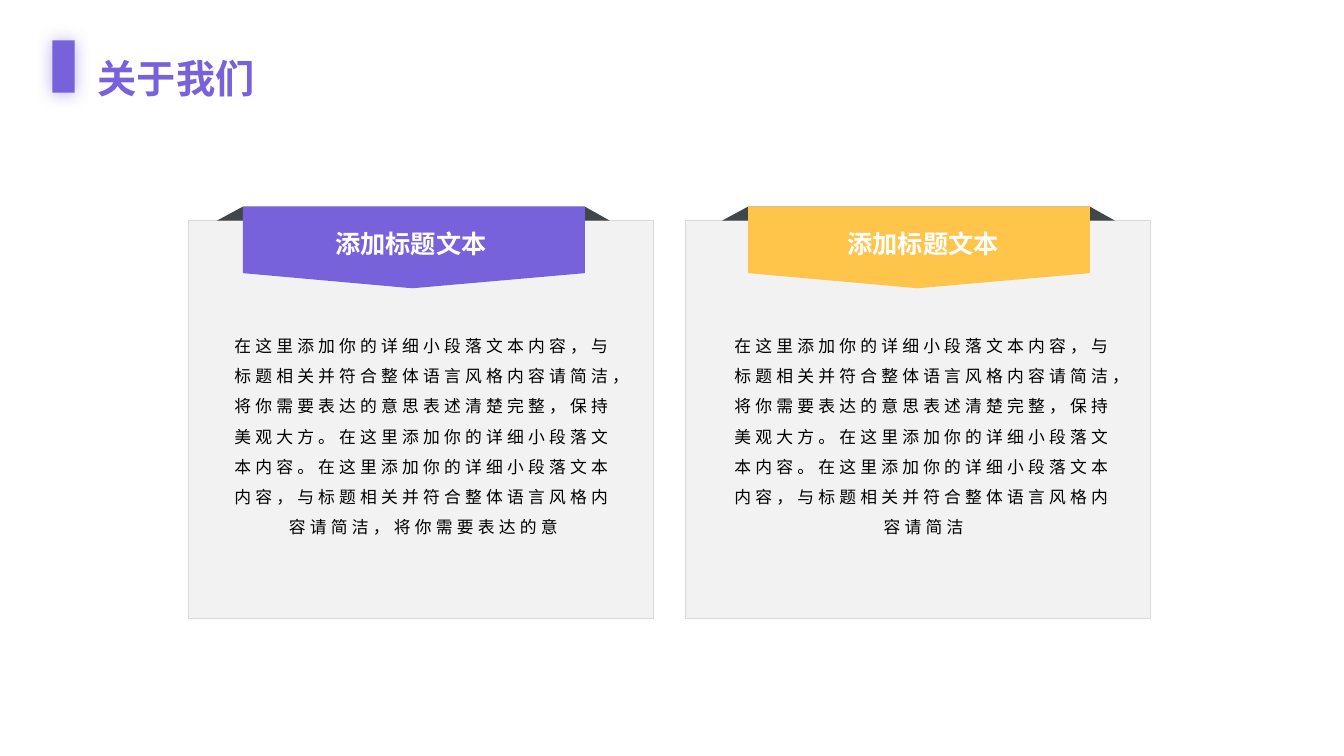
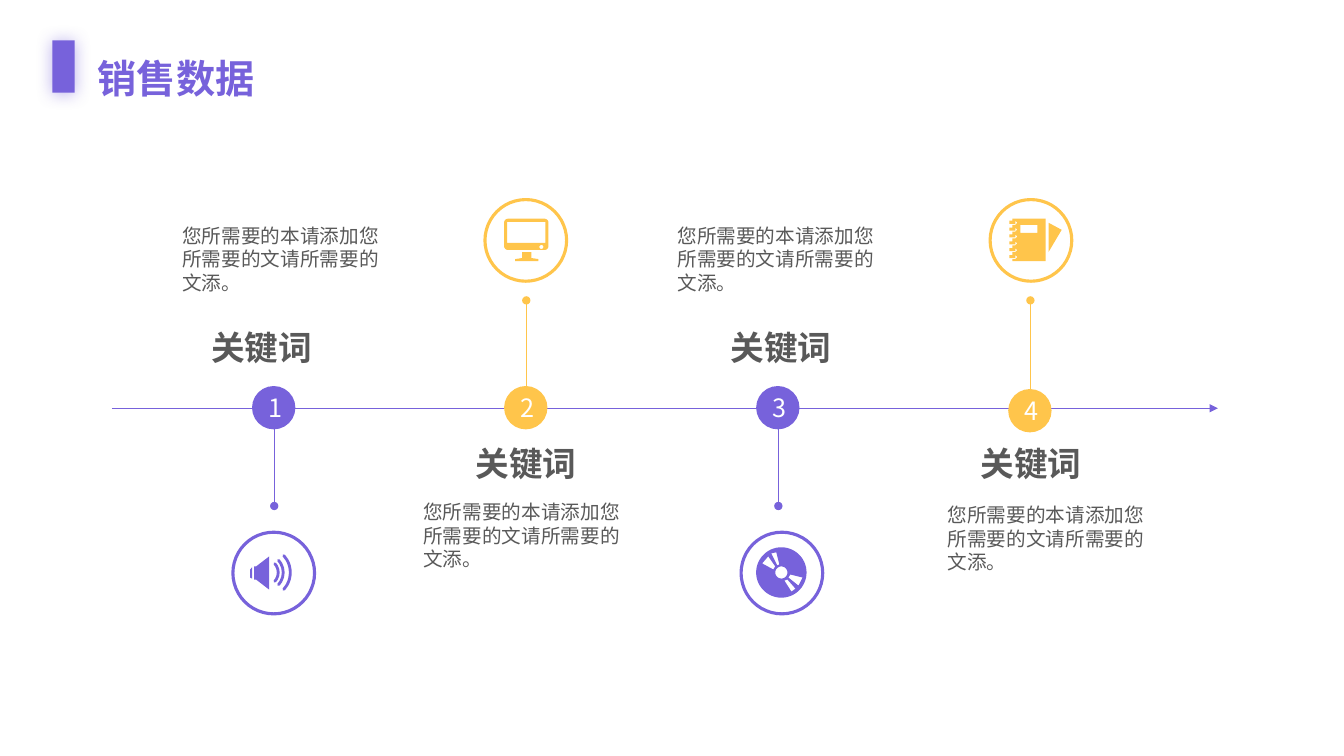
from dataclasses import dataclass
from math import cos, radians, sin
from typing import Callable

from lxml import etree
from pptx import Presentation
from pptx.dml.color import RGBColor
from pptx.enum import shapes, text
from pptx.oxml import ns
from pptx.util import Inches, Pt


@dataclass(frozen=True)
class Theme:
    """Colours, font and type sizes of the deck."""
    violet: str = "7762DB"
    amber: str = "FFC54B"
    panel: str = "F2F2F2"
    border: str = "D9D9D9"
    fold: str = "41464A"
    grey: str = "595959"
    black: str = "000000"
    white: str = "FFFFFF"
    font: str = "Noto Sans CJK SC"
    title: int = 28
    keyword: int = 24
    heading: int = 18
    detail: int = 14
    body: int = 12


THEME = Theme()
SHAPE, ALIGN = shapes.MSO_SHAPE, text.PP_ALIGN


@dataclass(frozen=True)
class Step:
    """One stop on the timeline."""
    color: str
    icon: Callable
    icon_left: float
    badge_top: float
    detail_at: tuple
    keyword_left: float
    text_above: bool


def sub(parent, tag, **attributes):
    """Append a namespaced XML element."""
    return etree.SubElement(parent, ns.qn(tag), attributes)


def rgb(color):
    """Turn a hex string into a colour."""
    return RGBColor.from_string(color)


def paint(shape, fill=None, line=None, weight=0.75):
    """Set fill and line, and clear the shadow."""
    shape.shadow.inherit = False
    if fill:
        shape.fill.solid()
        shape.fill.fore_color.rgb = rgb(fill)
    else:
        shape.fill.background()
    if line:
        shape.line.color.rgb = rgb(line)
        shape.line.width = Pt(weight)
    else:
        shape.line.fill.background()
    return shape


def preset(slide, kind, left, top, width, height, **style):
    """Add a painted preset shape."""
    box = map(Inches, (left, top, width, height))
    return paint(slide.shapes.add_shape(kind, *box), **style)


def outline(slide, origin, contours, color):
    """Fill closed contours given relative to an origin."""
    builder = None
    for contour in contours:
        points = [(Inches(origin[0] + x), Inches(origin[1] + y)) for x, y in contour]
        if builder is None:
            builder = slide.shapes.build_freeform(*points[0])
        else:
            builder.move_to(*points[0])
        builder.add_line_segments(points[1:], close=True)
    return paint(builder.convert_to_shape(), fill=color)


def write(frame, words, size, color, bold=False, align=ALIGN.LEFT, spacing=None, tracking=0):
    """Write one styled run into a text frame."""
    paragraph = frame.paragraphs[0]
    paragraph.alignment = align
    if spacing:
        paragraph.line_spacing = spacing
    run = paragraph.add_run()
    run.text = words
    run.font.size, run.font.bold, run.font.name = Pt(size), bold, THEME.font
    run.font.color.rgb = rgb(color)
    properties = run.font._element
    properties.find(ns.qn("a:latin")).addnext(
        etree.Element(ns.qn("a:ea"), typeface=THEME.font))
    if tracking:
        properties.set("spc", str(tracking * 100))


def label(slide, left, top, width, height, words, size, color, **style):
    """Add a wrapping text box that grows with its text."""
    frame = slide.shapes.add_textbox(*map(Inches, (left, top, width, height))).text_frame
    frame.word_wrap = True
    frame.auto_size = text.MSO_AUTO_SIZE.SHAPE_TO_FIT_TEXT
    write(frame, words, size, color, **style)


def connect(slide, start, end, color, head=None, tail=None):
    """Draw a thin line with optional end marks."""
    points = map(Inches, (*start, *end))
    line = slide.shapes.add_connector(shapes.MSO_CONNECTOR.STRAIGHT, *points)
    line.line.color.rgb = rgb(color)
    line.line.width = Pt(0.5)
    stroke = line.line._get_or_add_ln()
    for tag, mark in (("a:headEnd", head), ("a:tailEnd", tail)):
        if mark:
            sub(stroke, tag, type=mark)
    sub(line._element.spPr, "a:effectLst")


def titled_slide(deck, words):
    """Add a slide with the glowing bar and its title."""
    slide = deck.slides.add_slide(deck.slide_layouts[5])
    bar = preset(slide, SHAPE.RECTANGLE, 0.52, 0.4, 0.22, 0.52, fill=THEME.violet)
    glow = sub(bar._element.spPr.find(ns.qn("a:effectLst")), "a:outerShdw",
               blurRad=str(Pt(12)), dist=str(Pt(1)), dir="5400000", rotWithShape="0")
    sub(sub(glow, "a:srgbClr", val=THEME.violet), "a:alpha", val="50000")
    title = slide.shapes.title
    title.left, title.top, title.width, title.height = map(Inches, (0.87, 0.26, 2.43, 0.73))
    frame = title.text_frame
    frame.word_wrap = True
    frame.vertical_anchor = text.MSO_ANCHOR.TOP
    frame.auto_size = text.MSO_AUTO_SIZE.SHAPE_TO_FIT_TEXT
    write(frame, words, THEME.title, THEME.violet, bold=True, align=ALIGN.JUSTIFY, spacing=1.5)
    return slide


def ribbon_card(slide, panel_left, ribbon_left, heading_left, body_left, color, body):
    """Add a panel with a folded ribbon, a heading and body text."""
    preset(slide, SHAPE.RECTANGLE, panel_left, 2.19, 4.61, 3.95,
           fill=THEME.panel, line=THEME.border)
    origin = (ribbon_left, 2.05)
    outline(slide, origin, [[(0, 0), (3.39, 0), (3.64, 0.14), (-0.26, 0.14)]], THEME.fold)
    outline(slide, origin,
            [[(0, 0), (3.39, 0), (3.39, 0.66), (1.68, 0.81), (0, 0.66)]], color)
    label(slide, heading_left, 2.22, 2.29, 0.4, "添加标题文本", THEME.heading, THEME.white,
          bold=True, align=ALIGN.CENTER)
    label(slide, body_left, 3.18, 4, 2.19, body, THEME.body, THEME.black,
          align=ALIGN.CENTER, spacing=1.5, tracking=3)


def arc(x, y, radius, start=0, end=360):
    """List points along an arc, in degrees."""
    return [(x + radius * cos(radians(a)), y + radius * sin(radians(a)))
            for a in range(start, end + 1, 6)]


def rectangle(left, top, right, bottom):
    """List the corners of a rectangle."""
    return [(left, top), (right, top), (right, bottom), (left, bottom)]


def speaker_icon(slide, origin, color):
    """Draw a loudspeaker with three sound waves."""
    cone = [(0.36, 0.24), (0.23, 0.34), (0.21, 0.34), (0.21, 0.47), (0.23, 0.47), (0.36, 0.57)]
    back = [(0.17, 0.37), (0.19, 0.35), (0.19, 0.46), (0.17, 0.45)]
    outline(slide, origin, [cone, back], color)
    for radius in (0.13, 0.18, 0.25):
        wave = preset(slide, SHAPE.ARC, origin[0] + 0.32 - radius, origin[1] + 0.4 - radius,
                      2 * radius, 2 * radius, line=color, weight=2)
        wave.adjustments[0], wave.adjustments[1] = 318 * 0.6, 42 * 0.6
        wave.line._get_or_add_ln().set("cap", "rnd")


def monitor_icon(slide, origin, color):
    """Draw a desktop screen on its stand."""
    corners = ((0.59, 0.46), (0.23, 0.46), (0.23, 0.23), (0.59, 0.23))
    case = [point for i, (x, y) in enumerate(corners)
            for point in arc(x, y, 0.04, 90 * i, 90 * i + 90)]
    stand = [(0.37, 0.52), (0.46, 0.52), (0.46, 0.58), (0.53, 0.59),
             (0.53, 0.61), (0.3, 0.61), (0.3, 0.59), (0.37, 0.58)]
    screen = rectangle(0.22, 0.22, 0.6, 0.43)
    outline(slide, origin, [case, screen, arc(0.56, 0.47, 0.02), stand], color)


def disc_icon(slide, origin, color):
    """Draw a disc with cut-out reflections."""
    glints = [
        [(0.36, 0.33), (0.38, 0.32), (0.35, 0.2), (0.3, 0.21)],
        [(0.46, 0.47), (0.43, 0.48), (0.5, 0.59), (0.54, 0.56)],
        [(0.61, 0.45), (0.49, 0.42), (0.47, 0.45), (0.57, 0.53)],
        [(0.21, 0.31), (0.32, 0.37), (0.34, 0.34), (0.27, 0.24)],
    ]
    outline(slide, origin, [arc(0.4, 0.4, 0.25), arc(0.4, 0.4, 0.06), *glints], color)


def notebook_icon(slide, origin, color):
    """Draw a ring-bound notebook and a page corner."""
    hook = [(0.22, 0), (0.19, 0), (0.19, 0.03), (0.25, 0.03),
            (0.25, 0), (0.27, 0.02), (0.25, 0.04), (0.22, 0.04)]
    rings = [(x, 0.21 + 0.34 * i / 5 + y) for i in range(6) for x, y in hook]
    cover = [(0.55, 0.19), (0.22, 0.19), *rings, (0.22, 0.61), (0.55, 0.61)]
    page = [(0.58, 0.23), (0.58, 0.52), (0.71, 0.3)]
    outline(slide, origin, [cover, rectangle(0.3, 0.25, 0.47, 0.33), page], color)


def timeline_step(slide, number, step):
    """Add the stem, badge, ringed icon and texts of one step."""
    center = 2.72 + 2.5 * (number - 1)
    stem_top, icon_top, keyword_top = (4.04, 5.28, 3.23) if step.text_above else (2.98, 1.98, 4.38)
    connect(slide, (center, stem_top), (center, stem_top + 0.98), step.color, "oval", "oval")
    badge = preset(slide, SHAPE.OVAL, center - 0.22, step.badge_top, 0.43, 0.43, fill=step.color)
    badge.text_frame.vertical_anchor = text.MSO_ANCHOR.MIDDLE
    write(badge.text_frame, str(number), THEME.heading, THEME.white, align=ALIGN.CENTER)
    preset(slide, SHAPE.OVAL, step.icon_left, icon_top, 0.81, 0.81, line=step.color, weight=2.25)
    step.icon(slide, (step.icon_left, icon_top), step.color)
    label(slide, *step.detail_at, 2.25, 0.81, "您所需要的本请添加您所需要的文请所需要的文添。",
          THEME.detail, THEME.grey)
    label(slide, step.keyword_left, keyword_top, 1.45, 0.48, "关键词", THEME.keyword, THEME.grey,
          bold=True, align=ALIGN.CENTER, spacing=0.94)


def about_slide(deck):
    """Build the slide with two ribbon cards."""
    slide = titled_slide(deck, "关于我们")
    request = "在这里添加你的详细小段落文本内容，与标题相关并符合整体语言风格内容请简洁"
    body = (request + "，将你需要表达的意思表述清楚完整，保持美观大方。"
            "在这里添加你的详细小段落文本内容。" + request)
    ribbon_card(slide, 1.87, 2.41, 2.93, 2.2, THEME.violet, body + "，将你需要表达的意")
    ribbon_card(slide, 6.8, 7.42, 8.01, 7.16, THEME.amber, body)


def sales_slide(deck):
    """Build the four-step timeline slide."""
    slide = titled_slide(deck, "销售数据")
    connect(slide, (1.11, 4.05), (12.08, 4.05), THEME.violet, tail="triangle")
    steps = (
        Step(THEME.violet, speaker_icon, 2.31, 3.83, (1.71, 2.17), 1.87, True),
        Step(THEME.amber, monitor_icon, 4.81, 3.83, (4.1, 4.91), 4.49, False),
        Step(THEME.violet, disc_icon, 7.35, 3.83, (6.62, 2.17), 7.02, True),
        Step(THEME.amber, notebook_icon, 9.82, 3.86, (9.3, 4.94), 9.5, False),
    )
    for number, step in enumerate(steps, 1):
        timeline_step(slide, number, step)


def main():
    """Build and save the deck."""
    deck = Presentation()
    deck.slide_width, deck.slide_height = Inches(13.33), Inches(7.5)
    about_slide(deck)
    sales_slide(deck)
    deck.save("out.pptx")


if __name__ == "__main__":
    main()
